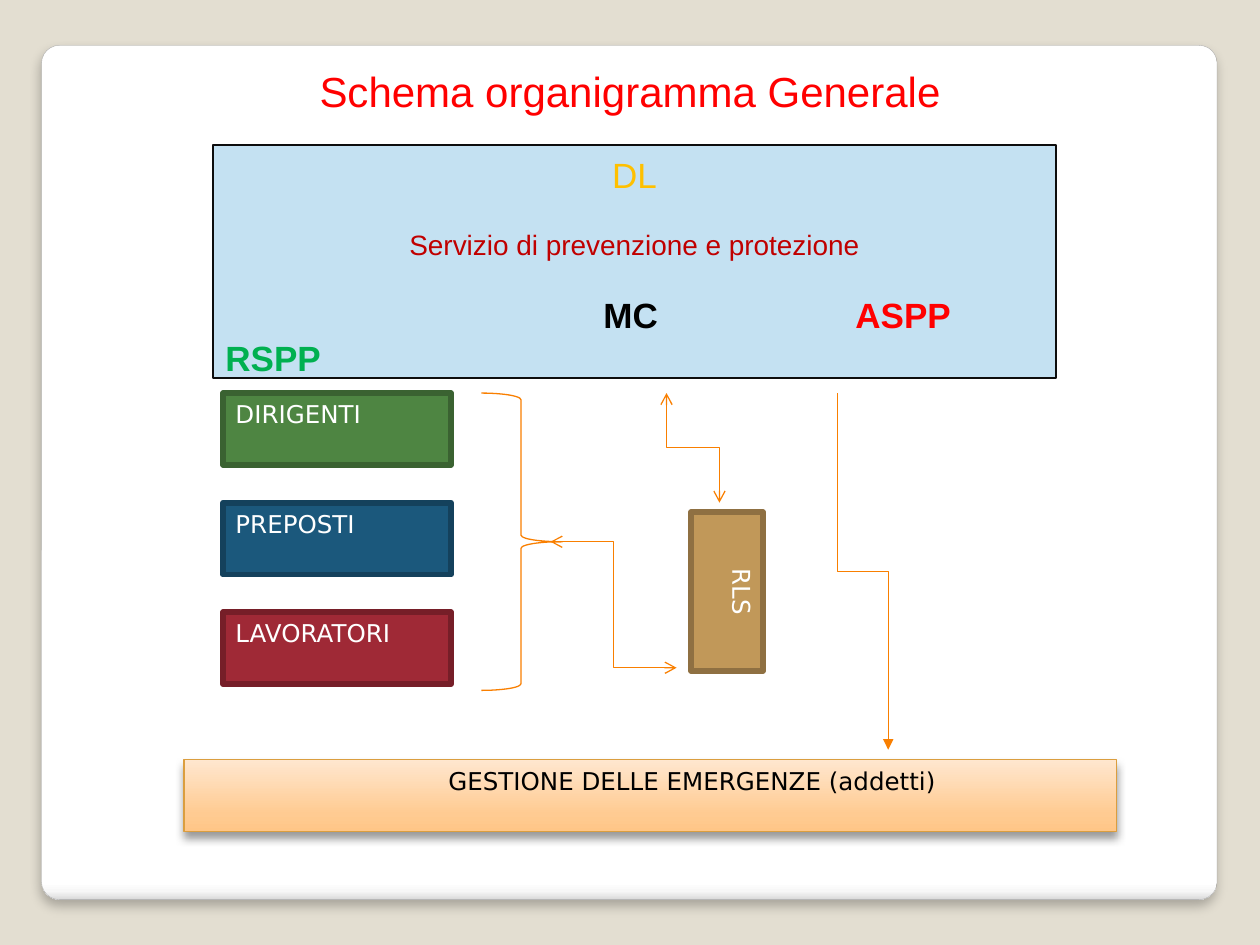
from pptx import Presentation
from pptx.dml.color import RGBColor
from pptx.enum.shapes import MSO_CONNECTOR, MSO_SHAPE
from pptx.enum.text import MSO_ANCHOR, MSO_AUTO_SIZE, PP_ALIGN
from pptx.oxml import parse_xml
from pptx.oxml.ns import nsdecls, qn
from pptx.util import Inches, Pt
from lxml.etree import SubElement


def color(value):
    return RGBColor.from_string(value)


def write(paragraph, text, size=14, font="DejaVu Sans", ink="FFFFFF", bold=False,
          align=PP_ALIGN.LEFT, before=0):
    paragraph.alignment = align
    paragraph.space_before = Pt(before)
    run = paragraph.add_run()
    run.text = text
    run.font.size = Pt(size)
    run.font.name = font
    run.font.bold = bold
    run.font.color.rgb = color(ink)


def prepare(frame, top=0.05):
    frame.word_wrap = True
    frame.auto_size = MSO_AUTO_SIZE.NONE
    frame.vertical_anchor = MSO_ANCHOR.TOP
    frame.margin_left = frame.margin_right = Inches(0.1)
    frame.margin_top, frame.margin_bottom = Inches(top), Inches(0.05)
    return frame


def add_box(slide, box, line, weight, fill=None, kind=MSO_SHAPE.RECTANGLE):
    shape = slide.shapes.add_shape(kind, *map(Inches, box))
    shape.shadow.inherit = False
    if fill:
        shape.fill.solid()
        shape.fill.fore_color.rgb = color(fill)
    else:
        shape.fill.background()
    shape.line.color.rgb = color(line)
    shape.line.width = Pt(weight)
    prepare(shape.text_frame)
    return shape


def add_gradient(shape, stops, angle):
    marks = "".join(f'<a:gs pos="{position * 1000}"><a:srgbClr val="{value}"/></a:gs>'
                    for position, value in stops)
    gradient = parse_xml(f'<a:gradFill {nsdecls("a")} rotWithShape="1"><a:gsLst>{marks}</a:gsLst>'
                         f'<a:lin ang="{angle * 60000}" scaled="0"/></a:gradFill>')
    properties = shape._element.spPr
    properties.replace(properties.find(qn("a:noFill")), gradient)


def add_shadow(shape, alpha, blur, distance):
    effects = shape._element.spPr.find(qn("a:effectLst"))
    effects.append(parse_xml(
        f'<a:outerShdw {nsdecls("a")} blurRad="{Pt(blur)}" dist="{Pt(distance)}" dir="5400000" '
        f'algn="ctr" rotWithShape="0"><a:srgbClr val="000000"><a:alpha val="{alpha * 1000}"/>'
        f'</a:srgbClr></a:outerShdw>'))


def add_elbow(slide, start, end, head=None, tail=None, vertical=False):
    (x1, y1), (x2, y2) = start, end
    if vertical:
        cx, cy, dx, dy = (x1 + x2) / 2, (y1 + y2) / 2, (x1 - x2) / 2, (y1 - y2) / 2
        x1, y1, x2, y2 = cx - dy, cy + dx, cx + dy, cy - dx
    elbow = slide.shapes.add_connector(MSO_CONNECTOR.ELBOW, *map(Inches, (x1, y1, x2, y2)))
    elbow.line.color.rgb = color("F97F00")
    elbow.line.width = Pt(0.75)
    properties = elbow._element.spPr
    if vertical:
        properties.find(qn("a:xfrm")).set("rot", "16200000")
    for tag, arrow in (("a:headEnd", head), ("a:tailEnd", tail)):
        if arrow:
            SubElement(properties.find(qn("a:ln")), qn(tag), type=arrow)
    SubElement(properties, qn("a:effectLst"))


def add_card(slide, box):
    card = add_box(slide, box, "A4A4A4", 0.16, kind=MSO_SHAPE.ROUNDED_RECTANGLE)
    card.adjustments[0] = 0.021
    add_gradient(card, [(0, "FFFFFF"), (98, "FFFFFF"), (99, "F7F7F7"), (100, "DADADA")], 90)
    add_shadow(card, 25, 6, 4)
    slide.shapes._spTree.insert(2, card._element)


def add_title(slide, box):
    title = slide.shapes.title
    title.left, title.top, title.width, title.height = map(Inches, box)
    write(prepare(title.text_frame, top=0.08).paragraphs[0], "Schema organigramma Generale",
          size=24, font="Arial", ink="FF0000", align=PP_ALIGN.CENTER)


def add_service(slide, box):
    frame = prepare(add_box(slide, box, "0D0D0D", 0.75, "C4E1F2").text_frame, top=0.07)
    employer, service, roles, manager = [frame.paragraphs[0]] + [
        frame.add_paragraph() for _ in range(3)]
    write(employer, "DL", size=20, font="Arial", ink="FFC000", align=PP_ALIGN.CENTER)
    write(service, "Servizio di prevenzione e protezione", size=16, font="Arial", ink="C00000",
          align=PP_ALIGN.CENTER, before=18)
    stops = SubElement(roles._p.get_or_add_pPr(), qn("a:tabLst"))
    for position in (3, 5):
        SubElement(stops, qn("a:tab"), pos=str(Inches(position)), algn="l")
    for text, ink in (("\tMC", "000000"), ("\tASPP", "FF0000")):
        write(roles, text, size=20, font="Arial", ink=ink, bold=True, before=18.5)
    write(manager, "RSPP", size=20, font="Arial", ink="00B050", bold=True, before=1)


def add_staff(slide, left, top, width, height, pitch):
    levels = [("DIRIGENTI", "4E8542", "3A6231"), ("PREPOSTI", "1B587C", "14415C"),
              ("LAVORATORI", "9F2936", "761E28")]
    for row, (name, fill, line) in enumerate(levels):
        level = add_box(slide, (left, top + row * pitch, width, height), line, 3.35, fill)
        write(level.text_frame.paragraphs[0], name)


def add_representative(slide, box):
    representative = add_box(slide, box, "8F7042", 3.35, "C19859")
    representative.rotation = 90
    write(representative.text_frame.paragraphs[0], "RLS", align=PP_ALIGN.CENTER)


def add_emergency(slide, box):
    emergency = add_box(slide, box, "DB9E3F", 0.75)
    add_gradient(emergency, [(0, "FFC687"), (25, "FFCB92"), (100, "FFE7CF")], 270)
    add_shadow(emergency, 40, 5.2, 3)
    paragraph = emergency.text_frame.paragraphs[0]
    write(paragraph, "GESTIONE DELLE EMERGENZE (addetti)", ink="000000")
    paragraph._p.get_or_add_pPr().set("marL", str(Inches(2)))


def add_links(slide, brace_box):
    add_elbow(slide, (6.65, 3.12), (7.05, 5.95), tail="triangle", vertical=True)
    add_elbow(slide, (5.71, 3.99), (5.29, 3.12), head="arrow", tail="arrow", vertical=True)
    add_box(slide, brace_box, "F97F00", 0.75, kind=MSO_SHAPE.RIGHT_BRACE)
    add_elbow(slide, (4.37, 4.3), (5.37, 5.3), head="arrow", tail="arrow")


def main():
    deck = Presentation()
    deck.slide_width, deck.slide_height = Inches(10), Inches(7.5)
    slide = deck.slides.add_slide(deck.slide_layouts[5])
    slide.background.fill.solid()
    slide.background.fill.fore_color.rgb = color("E3DED1")
    add_card(slide, (0.33, 0.36, 9.33, 6.78))
    add_title(slide, (0, 0.44, 10, 0.74))
    add_service(slide, (1.69, 1.15, 6.69, 1.85))
    add_staff(slide, 1.77, 3.12, 1.81, 0.57, pitch=0.87)
    add_emergency(slide, (1.46, 6.03, 7.4, 0.57))
    add_representative(slide, (5.14, 4.41, 1.26, 0.57))
    add_links(slide, (3.82, 3.12, 0.63, 2.36))
    deck.save("out.pptx")


if __name__ == "__main__":
    main()
